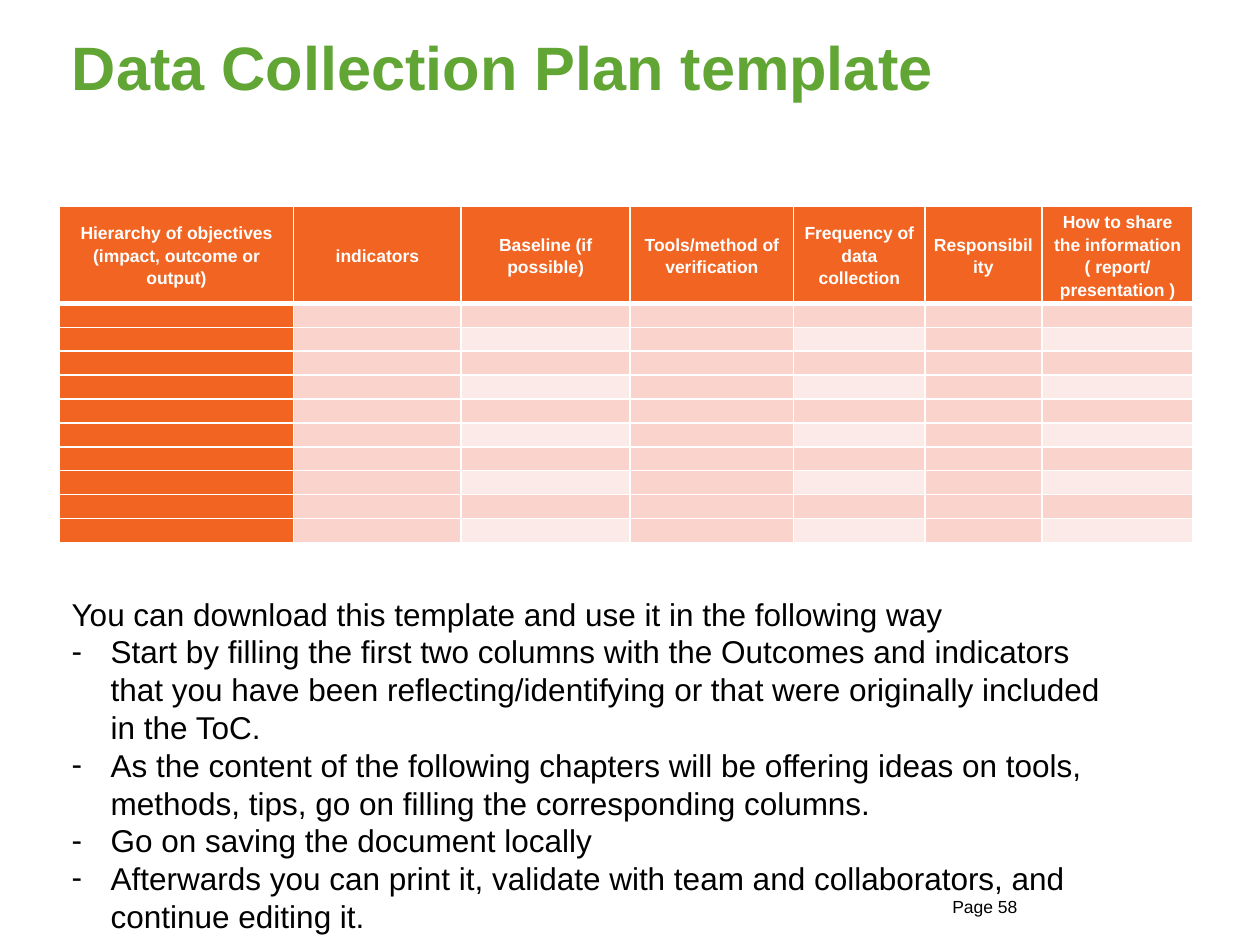
import pptx
import pptx.util
import pptx.dml.color
import pptx.enum.text
import pptx.oxml
import pptx.oxml.ns

WIDE, HIGH = 10, 7.5
LEFT = 0.47
FONT = "Arial"
HUES = {
    "title": "61A534",
    "text": "000000",
    "line": "FFFFFF",
    "head": "F16422",
    "mid": "FAD3CD",
    "pale": "FCEAE8",
}
COLS = [1.86, 1.33, 1.34, 1.3, 1.04, 0.93, 1.2]
ROWS = [0.74] + [0.19] * 10
HEADS = [
    "Hierarchy of objectives\n(impact, outcome or output)",
    "indicators",
    "Baseline (if possible)",
    "Tools/method of verification",
    "Frequency of data collection",
    "Responsibility",
    "How to share the information ( report/ presentation )",
]
INTRO = "You can download this template and use it in the following way"
STEPS = [
    "Start by filling the first two columns with the Outcomes and indicators "
    "that you have been reflecting/identifying or that were originally included in the ToC.",
    "As the content of the following chapters will be offering ideas on tools, "
    "methods, tips, go on filling the corresponding columns.",
    "Go on saving the document locally",
    "Afterwards you can print it, validate with team and collaborators, and continue editing it.",
]


def inch(size):
    return pptx.util.Inches(size)


def tint(name):
    return pptx.dml.color.RGBColor.from_string(HUES[name])


def node(parent, tag, **attrs):
    child = pptx.oxml.ns.qn(tag)
    item = parent.makeelement(child, attrs)
    parent.append(item)
    return item


def style(frame, size, hue, bold=False):
    for para in frame.paragraphs:
        for run in para.runs:
            run.font.name = FONT
            run.font.size = pptx.util.Pt(size)
            run.font.bold = bold
            run.font.color.rgb = tint(hue)


def add_title(slide, text):
    title = slide.shapes.title
    title.left, title.top = inch(LEFT), inch(0.13)
    title.width, title.height = inch(9), inch(0.79)
    frame = title.text_frame
    frame.text = text
    frame.auto_size = pptx.enum.text.MSO_AUTO_SIZE.NONE
    frame.vertical_anchor = pptx.enum.text.MSO_ANCHOR.MIDDLE
    frame.paragraphs[0].alignment = pptx.enum.text.PP_ALIGN.LEFT
    style(frame, 35, "title", True)


def add_text(slide, place, text, size):
    box = slide.shapes.add_textbox(*map(inch, place))
    frame = box.text_frame
    frame.word_wrap = True
    frame.text = text
    style(frame, size, "text")
    return frame


def add_dash(para):
    props = para._p.get_or_add_pPr()
    props.set("marL", str(inch(0.31)))
    props.set("indent", str(-inch(0.31)))
    node(props, "a:buFont", typeface=FONT)
    node(props, "a:buChar", char="-")


def add_rims(cell, row):
    props = cell._tc.get_or_add_tcPr()
    thick = {"a:lnT": row == 1, "a:lnB": row == 0}
    for tag in ("a:lnL", "a:lnR", "a:lnT", "a:lnB"):
        width = pptx.util.Pt(3 if thick.get(tag) else 1)
        fill = node(node(props, tag, w=str(width)), "a:solidFill")
        node(fill, "a:srgbClr", val=HUES["line"])


def pick_fill(row, col):
    if row == 0 or col == 0:
        return "head"
    return "pale" if row % 2 == 0 and col % 2 == 0 else "mid"


def fill_cell(cell, row, col):
    add_rims(cell, row)
    cell.fill.solid()
    cell.fill.fore_color.rgb = tint(pick_fill(row, col))
    cell.margin_left = cell.margin_right = inch(0.07)
    cell.margin_top = cell.margin_bottom = 0
    cell.vertical_anchor = pptx.enum.text.MSO_ANCHOR.MIDDLE
    frame = cell.text_frame
    if row:
        node(frame.paragraphs[0]._p, "a:endParaRPr", sz="1000")
        return
    frame.text = HEADS[col]
    for para in frame.paragraphs:
        para.alignment = pptx.enum.text.PP_ALIGN.CENTER
        para.line_spacing = 1.15
    style(frame, 10, "line", True)


def add_grid(slide):
    place = map(inch, (LEFT, 1.64, sum(COLS), sum(ROWS)))
    grid = slide.shapes.add_table(len(ROWS), len(COLS), *place).table
    grid.first_col = True
    grid.horz_banding = False
    for col, width in enumerate(COLS):
        grid.columns[col].width = inch(width)
    for row, height in enumerate(ROWS):
        grid.rows[row].height = inch(height)
        for col in range(len(COLS)):
            fill_cell(grid.cell(row, col), row, col)


def main():
    deck = pptx.Presentation()
    deck.slide_width, deck.slide_height = inch(WIDE), inch(HIGH)
    slide = deck.slides.add_slide(deck.slide_layouts[5])
    add_text(slide, (7.46, 7.06, 1.34, 0.18), "Page 58", 10)
    add_title(slide, "Data Collection Plan template")
    frame = add_text(slide, (LEFT, 4.67, 8.49, 2.83), "\n".join([INTRO] + STEPS), 18)
    for para in frame.paragraphs[1:]:
        add_dash(para)
    add_grid(slide)
    deck.save("out.pptx")


if __name__ == "__main__":
    main()
